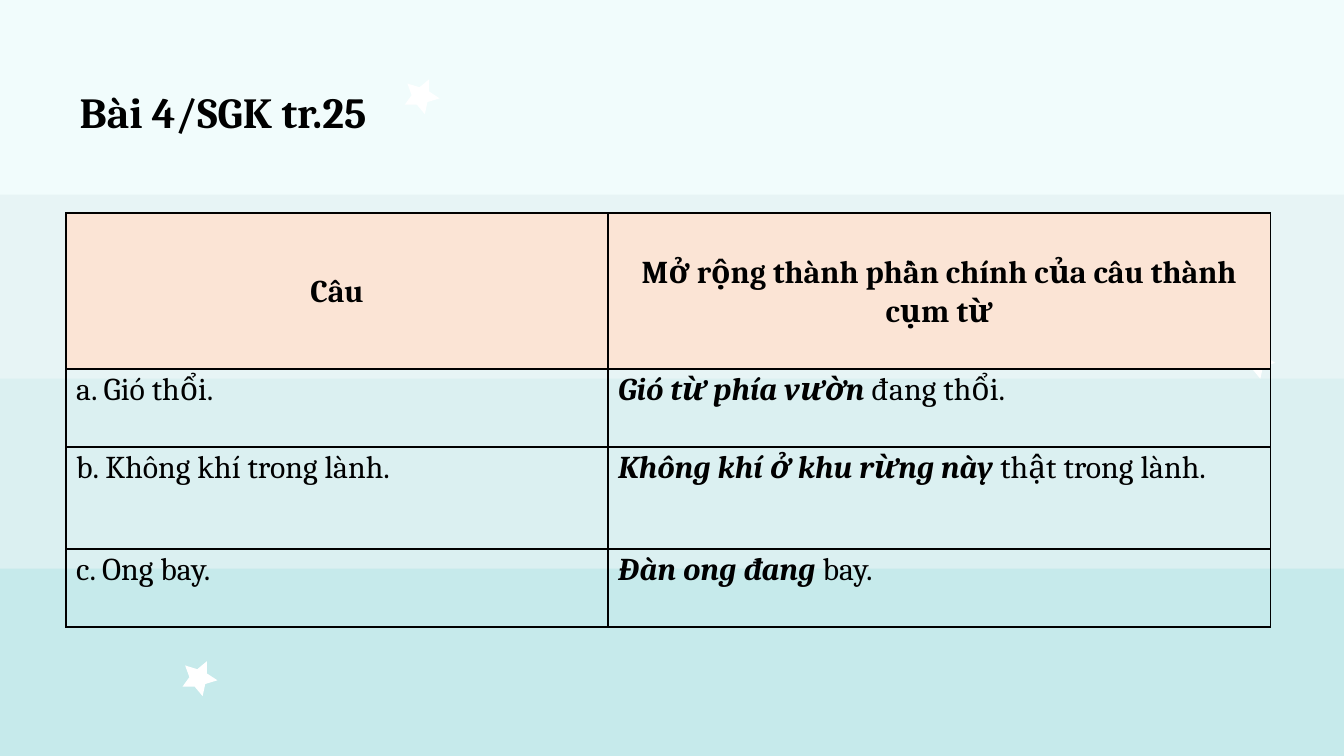
from dataclasses import dataclass

from lxml import etree
from pptx import Presentation
from pptx.dml.color import RGBColor
from pptx.enum import shapes, text
from pptx.oxml import ns
from pptx.util import Cm, Pt


@dataclass(frozen=True)
class Theme:
    font: str = "Cambria"
    title_size: float = 23
    table_size: float = 17
    ink: str = "000000"
    background: str = "E7F4F5"
    top_band: str = "F1FCFC"
    middle_band: str = "DBF0F1"
    bottom_band: str = "C6EAEB"
    star: str = "FFFFFF"
    header: str = "FBE4D5"


THEME = Theme()

# Star outline in hundredths of a centimetre
STAR = [(46, 0), (46, 23), (66, 36), (43, 43), (38, 66),
        (23, 48), (0, 48), (13, 30), (5, 8), (28, 15)]
STAR_PLACES = [(3.45, 12.5), (23.44, 6.5), (7.65, 1.5)]

HEADINGS = ["Câu", "Mở rộng thành phần chính của câu thành cụm từ"]
# Sentence, expanded part, remainder
SENTENCES = [
    ("a. Gió thổi.", "Gió từ phía vườn\u00a0", "đang thổi."),
    ("b. Không khí trong lành.", "Không khí ở khu rừng này\u00a0", "thật trong lành."),
    ("c. Ong bay.", "Đàn ong đang\u00a0", "bay."),
]
COLUMN_WIDTHS = [10.24, 12.52]
ROW_HEIGHTS = [2.95, 1.47, 1.93, 1.47]


def paint(shape, color):
    shape.shadow.inherit = False
    shape.fill.solid()
    shape.fill.fore_color.rgb = RGBColor.from_string(color)
    shape.line.fill.background()


def add_band(page, top, height, color):
    band = page.shapes.add_shape(shapes.MSO_SHAPE.RECTANGLE,
                                 Cm(-0.03), Cm(top), Cm(25.58), Cm(height))
    paint(band, color)


def add_star(page, left, top):
    builder = page.shapes.build_freeform(*STAR[0], scale=Cm(0.01))
    builder.add_line_segments(STAR[1:], close=True)
    paint(builder.convert_to_shape(Cm(left), Cm(top)), THEME.star)


def style_font(font, size, bold):
    font.name = THEME.font
    font.size = Pt(size)
    font.bold = bold
    font.italic = False
    font.color.rgb = RGBColor.from_string(THEME.ink)


def set_title(page, words):
    title = page.shapes.title
    title.left, title.top, title.width, title.height = Cm(1.25), Cm(1), Cm(6.35), Cm(1.55)
    frame = title.text_frame
    frame.text = words
    frame.word_wrap = True
    frame.auto_size = text.MSO_AUTO_SIZE.NONE
    frame.vertical_anchor = text.MSO_ANCHOR.TOP
    para = frame.paragraphs[0]
    para.alignment = text.PP_ALIGN.JUSTIFY
    para.line_spacing = 1.5
    style_font(para.font, THEME.title_size, True)
    # Bring the title in front of the backdrop
    page.shapes._spTree.append(title._element)


def add_borders(cell):
    properties = cell._tc.get_or_add_tcPr()
    for position, side in enumerate(("lnL", "lnR", "lnT", "lnB")):
        line = etree.Element(ns.qn(f"a:{side}"), w=str(Pt(1)))
        fill = etree.SubElement(line, ns.qn("a:solidFill"))
        etree.SubElement(fill, ns.qn("a:srgbClr"), val=THEME.ink)
        properties.insert(position, line)


def fill_cell(cell, parts, header=False):
    """Write (words, emphasised) parts into one bordered cell."""
    cell.margin_left = cell.margin_right = Cm(0.19)
    cell.margin_top = cell.margin_bottom = 0
    para = cell.text_frame.paragraphs[0]
    para.line_spacing = 1.07
    style_font(para.font, THEME.table_size, header)
    for words, emphasised in parts:
        span = para.add_run()
        span.text = words
        style_font(span.font, THEME.table_size, header or emphasised)
        span.font.italic = emphasised
    if header:
        para.alignment = text.PP_ALIGN.CENTER
        cell.vertical_anchor = text.MSO_ANCHOR.MIDDLE
        cell.fill.solid()
        cell.fill.fore_color.rgb = RGBColor.from_string(THEME.header)
    else:
        cell.fill.background()
    add_borders(cell)


def add_sentence_table(page):
    frame = page.shapes.add_table(len(ROW_HEIGHTS), len(COLUMN_WIDTHS), Cm(1.25), Cm(4.03),
                                  Cm(sum(COLUMN_WIDTHS)), Cm(sum(ROW_HEIGHTS)))
    table = frame.table
    table.first_row = table.horz_banding = False
    for column, width in zip(table.columns, COLUMN_WIDTHS):
        column.width = Cm(width)
    for row, height in zip(table.rows, ROW_HEIGHTS):
        row.height = Cm(height)
    for column, heading in enumerate(HEADINGS):
        fill_cell(table.cell(0, column), [(heading, False)], header=True)
    for row, (sentence, expanded, rest) in enumerate(SENTENCES, start=1):
        fill_cell(table.cell(row, 0), [(sentence, False)])
        fill_cell(table.cell(row, 1), [(expanded, True), (rest, False)])


def main():
    deck = Presentation()
    deck.slide_width, deck.slide_height = Cm(25.4), Cm(14.29)
    page = deck.slides.add_slide(deck.slide_layouts[5])

    # Backdrop
    page.background.fill.solid()
    page.background.fill.fore_color.rgb = RGBColor.from_string(THEME.background)
    add_band(page, 7.16, 3.66, THEME.middle_band)
    add_band(page, 10.75, 3.66, THEME.bottom_band)
    add_band(page, -0.08, 3.76, THEME.top_band)
    for left, top in STAR_PLACES:
        add_star(page, left, top)

    # Content
    set_title(page, "Bài 4/SGK tr.25")
    add_sentence_table(page)
    deck.save("out.pptx")


if __name__ == "__main__":
    main()
